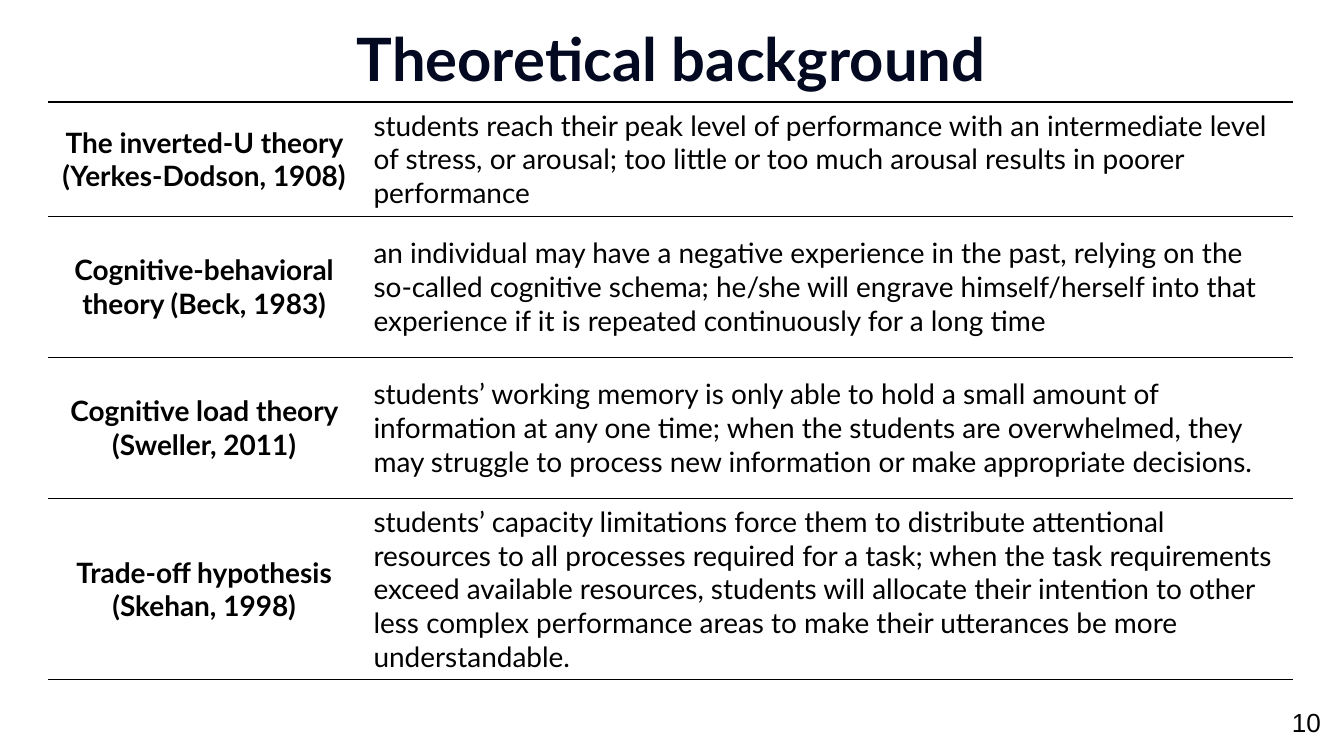
from lxml import etree
from pptx import Presentation
from pptx.dml.color import RGBColor
from pptx.enum.text import MSO_ANCHOR, PP_ALIGN
from pptx.oxml.ns import qn
from pptx.util import Pt

CENTER, LEFT = PP_ALIGN.CENTER, PP_ALIGN.LEFT
TOP, MIDDLE = MSO_ANCHOR.TOP, MSO_ANCHOR.MIDDLE

# Content
TITLE = "Theoretical background"
PAGE_NUMBER = "10"
THEORIES = [
    ("The inverted-U theory (Yerkes-Dodson, 1908)",
     "students reach their peak level of performance with an intermediate level "
     "of stress, or arousal; too little or too much arousal results in poorer "
     "performance"),
    ("Cognitive-behavioral theory (Beck, 1983)",
     "an individual may have a negative experience in the past, relying on the "
     "so-called cognitive schema; he/she will engrave himself/herself into that "
     "experience if it is repeated continuously for a long time"),
    ("Cognitive load theory (Sweller, 2011)",
     "students’ working memory is only able to hold a small amount of "
     "information at any one time; when the students are overwhelmed, they "
     "may struggle to process new information or make appropriate decisions."),
    ("Trade-off hypothesis (Skehan, 1998)",
     "students’ capacity limitations force them to distribute attentional "
     "resources to all processes required for a task; when the task requirements "
     "exceed available resources, students will allocate their intention to other "
     "less complex performance areas to make their utterances be more "
     "understandable."),
]

# Format, lengths in points
COLORS = {"title": "030920", "text": "000000", "rule": "000000"}
COLUMN_WIDTHS = [167, 499.7]
ROW_HEIGHTS = [61.2, 75.6, 75.6, 97.2]
TABLE_LEFT, TABLE_TOP = 25.9, 54.6
OUTER_RULE, INNER_RULE = 0.75, 0.5


def write(frame, text, size=15, font="Lato", color="text", bold=False, align=LEFT):
    paragraph = frame.paragraphs[0]
    paragraph.alignment = align
    run = paragraph.add_run()
    run.text = text
    run.font.size = Pt(size)
    run.font.name = font
    run.font.bold = bold
    run.font.color.rgb = RGBColor.from_string(COLORS[color])


def set_rules(cell, above, below):
    """Draw horizontal rules only; the sides stay open."""
    properties = cell._tc.get_or_add_tcPr()
    for side, width in (("L", 0), ("R", 0), ("T", above), ("B", below)):
        line = etree.SubElement(properties, qn(f"a:ln{side}"), w=str(int(Pt(width))))
        if width:
            fill = etree.SubElement(line, qn("a:solidFill"))
            etree.SubElement(fill, qn("a:srgbClr"), val=COLORS["rule"])
        else:
            etree.SubElement(line, qn("a:noFill"))


presentation = Presentation()
presentation.slide_width, presentation.slide_height = Pt(720), Pt(405)
slide = presentation.slides.add_slide(presentation.slide_layouts[5])

# Title
title = slide.shapes.title
title.left, title.top, title.width, title.height = Pt(56.2), Pt(4.3), Pt(607), Pt(44.6)
title_frame = title.text_frame
title_frame.vertical_anchor = TOP
title_frame.margin_left = title_frame.margin_right = Pt(7.2)
title_frame.margin_top = title_frame.margin_bottom = Pt(7.2)
write(title_frame, TITLE, size=32, color="title", bold=True, align=CENTER)

# Table of theories
theory_table = slide.shapes.add_table(
    len(THEORIES), len(COLUMN_WIDTHS), Pt(TABLE_LEFT), Pt(TABLE_TOP),
    Pt(sum(COLUMN_WIDTHS)), Pt(sum(ROW_HEIGHTS))).table
theory_table.first_row = theory_table.horz_banding = False
for column, width in zip(theory_table.columns, COLUMN_WIDTHS):
    column.width = Pt(width)

last = len(THEORIES) - 1
for r, (theory, height) in enumerate(zip(THEORIES, ROW_HEIGHTS)):
    theory_table.rows[r].height = Pt(height)
    for c, text in enumerate(theory):
        cell = theory_table.cell(r, c)
        set_rules(cell, OUTER_RULE if r == 0 else INNER_RULE,
                  OUTER_RULE if r == last else INNER_RULE)
        cell.fill.background()
        cell.vertical_anchor = MIDDLE
        write(cell.text_frame, text, bold=c == 0, align=LEFT if c else CENTER)

# Page number
number_frame = slide.shapes.add_textbox(
    Pt(679.7), Pt(374.4), Pt(40.3), Pt(24.5)).text_frame
number_frame.word_wrap = True
number_frame.vertical_anchor = MIDDLE
write(number_frame, PAGE_NUMBER, size=14, font="Arial", align=CENTER)

presentation.save("out.pptx")
